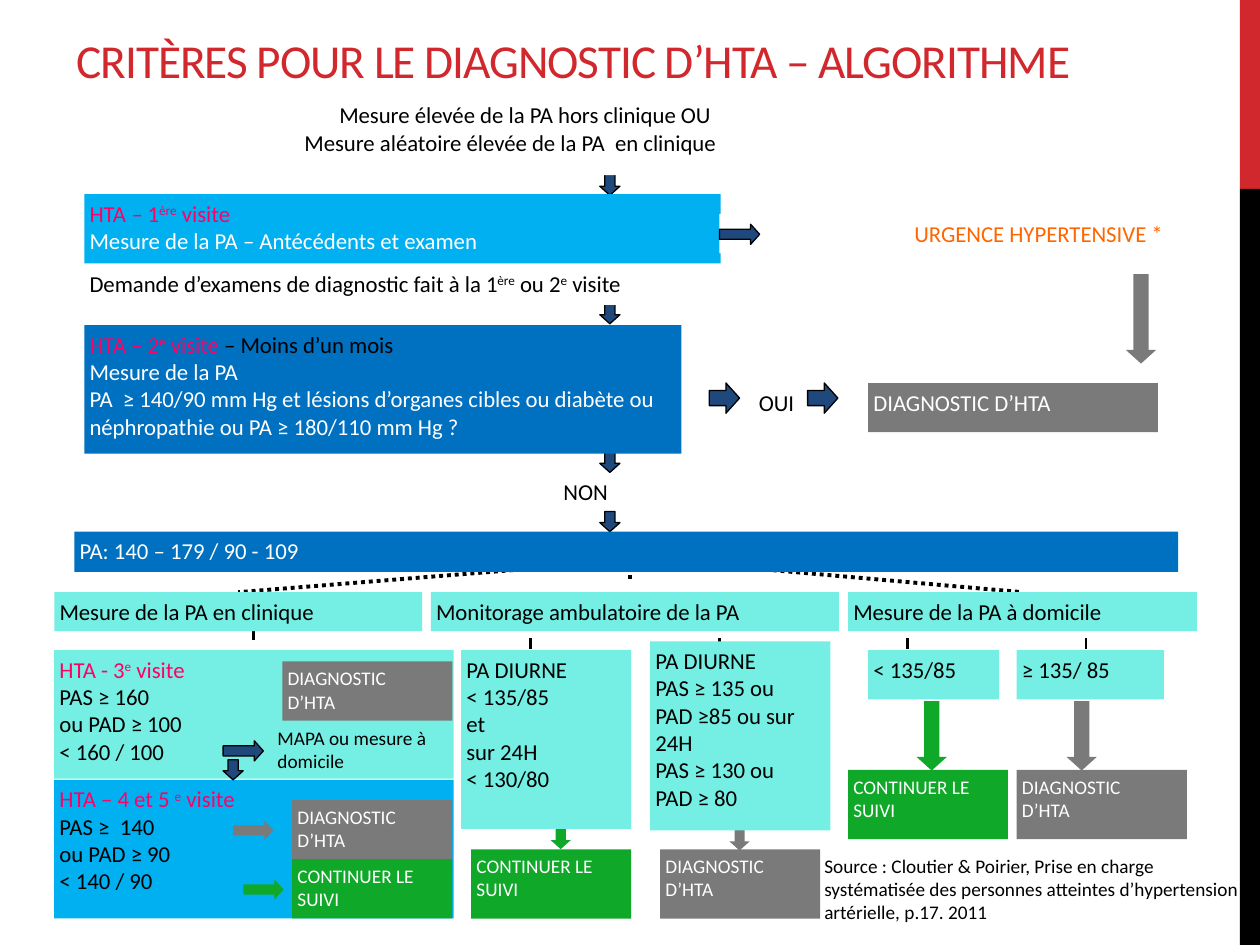
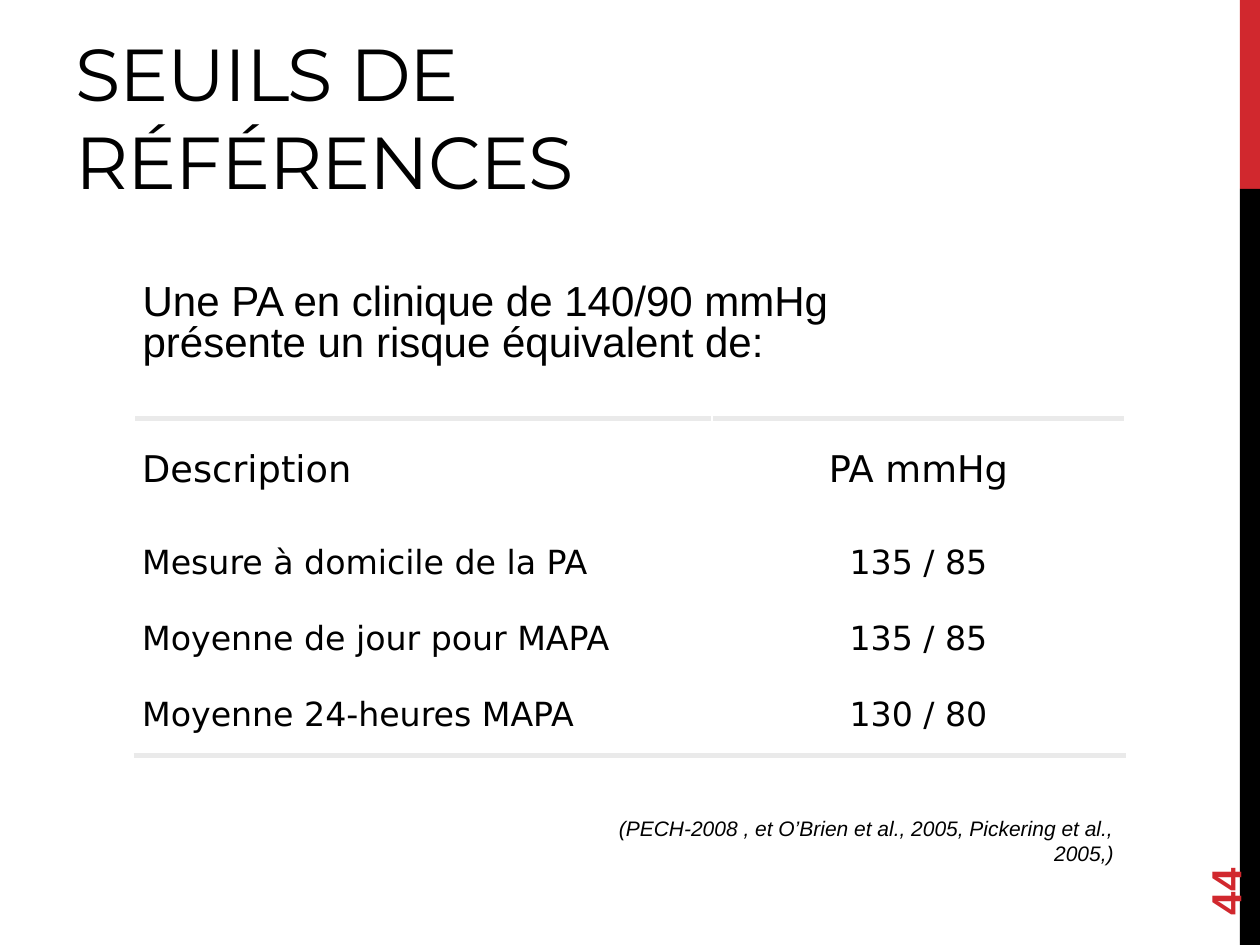
import dataclasses

import lxml.etree
import pptx
import pptx.dml.color
import pptx.enum.dml
import pptx.enum.shapes
import pptx.enum.text
import pptx.oxml.ns
import pptx.util

Pt = pptx.util.Pt
Align = pptx.enum.text.PP_ALIGN
Anchor = pptx.enum.text.MSO_ANCHOR
Dash = pptx.enum.dml.MSO_LINE
Preset = pptx.enum.shapes.MSO_SHAPE


@dataclasses.dataclass(frozen=True)
class Theme:
    red: str = "D1282E"
    black: str = "000000"
    white: str = "FFFFFF"
    pink: str = "FF0066"
    orange: str = "FF6600"
    sky: str = "00B0F0"
    blue: str = "0070C0"
    navy: str = "1F497D"
    aqua: str = "75EFE3"
    gray: str = "7A7A7A"
    green: str = "10A829"
    rule: str = "EAEAEA"
    flow_font: str = "Calibri"
    body_font: str = "Arial"
    table_font: str = "DejaVu Sans"
    title_font: str = "Montserrat"
    flow: float = 13
    small: float = 11
    flow_title: float = 27
    title: float = 42
    body: float = 24
    table_head: float = 21
    table_body: float = 19
    citation: float = 12


T = Theme()


def rgb(color):
    return pptx.dml.color.RGBColor.from_string(color)


def write(frame, paragraphs, size=T.flow, color=T.black, font=T.flow_font, align=Align.LEFT,
          anchor=Anchor.TOP, insets=(3, 3, 3, 3), bold=False, italic=False,
          line_spacing=None, tracking=0):
    """Each paragraph is a string or a list of (text, colour); ^x^ raises x."""
    frame.word_wrap = True
    frame.vertical_anchor = anchor
    frame.margin_left, frame.margin_top, frame.margin_right, frame.margin_bottom = map(Pt, insets)
    for index, content in enumerate(paragraphs):
        paragraph = frame.add_paragraph() if index else frame.paragraphs[0]
        paragraph.alignment = align
        if line_spacing:
            paragraph.line_spacing = line_spacing
        pieces = [(content, color)] if isinstance(content, str) else content
        for text, piece_color in pieces:
            for part, words in enumerate(text.split("^")):
                run = paragraph.add_run()
                run.text = words
                run.font.name, run.font.size = font, Pt(size)
                run.font.bold, run.font.italic = bold, italic
                run.font.color.rgb = rgb(piece_color)
                properties = run._r.get_or_add_rPr()
                if part % 2:
                    properties.set("baseline", "30000")
                if tracking:
                    properties.set("spc", str(round(tracking * 100)))


def preset(slide, kind, bounds, fill, outline=None):
    shape = slide.shapes.add_shape(kind, *map(Pt, bounds))
    shape.shadow.inherit = False
    shape.fill.solid()
    shape.fill.fore_color.rgb = rgb(fill)
    if outline:
        shape.line.color.rgb = rgb(outline)
        shape.line.width = Pt(0.75)
    else:
        shape.line.fill.background()
    return shape


def box(slide, bounds, fill, paragraphs, **text_format):
    shape = preset(slide, Preset.RECTANGLE, bounds, fill)
    write(shape.text_frame, paragraphs, **text_format)
    return shape


def label(slide, bounds, paragraphs, **text_format):
    shape = slide.shapes.add_textbox(*map(Pt, bounds))
    write(shape.text_frame, paragraphs, **text_format)
    return shape


def arrow(slide, center_x, center_y, length, thickness, fill, down=False):
    bounds = (center_x - length / 2, center_y - thickness / 2, length, thickness)
    shape = preset(slide, Preset.RIGHT_ARROW, bounds, fill, T.black if fill == T.navy else None)
    shape.adjustments[0], shape.adjustments[1] = 0.5, 0.45
    shape.rotation = 90 if down else 0


def dashed_line(slide, start, end, width, dash):
    line = slide.shapes.add_connector(pptx.enum.shapes.MSO_CONNECTOR.STRAIGHT,
                                      *map(Pt, start + end))
    line.line.color.rgb = rgb(T.black)
    line.line.width = Pt(width)
    line.line.dash_style = dash
    lxml.etree.SubElement(line._element.spPr, pptx.oxml.ns.qn("a:effectLst"))
    return line


def cell_rule(cell, side):
    """Draw the thick rule on one side of a cell: 'T' or 'B'."""
    qn = pptx.oxml.ns.qn
    border = lxml.etree.Element(qn(f"a:ln{side}"), w=str(Pt(3)))
    fill = lxml.etree.SubElement(border, qn("a:solidFill"))
    lxml.etree.SubElement(fill, qn("a:srgbClr"), val=T.rule)
    cell._tc.get_or_add_tcPr().insert(0, border)


def add_slide(deck):
    """Blank slide with the red and black edge band."""
    slide = deck.slides.add_slide(deck.slide_layouts[6])
    preset(slide, Preset.RECTANGLE, (708.5, 0, 11.5, 108), T.red)
    preset(slide, Preset.RECTANGLE, (708.5, 108, 11.5, 432), T.black)
    return slide


def outcome(slide, bounds, confirmed):
    if confirmed:
        fill, paragraphs = T.gray, ["DIAGNOSTIC", "D’HTA"]
    else:
        fill, paragraphs = T.green, ["CONTINUER LE SUIVI"]
    box(slide, bounds, fill, paragraphs, size=T.small, color=T.white)


def add_visits(slide):
    box(slide, (48.2, 110.9, 363.6, 39.6), T.sky,
        [[("HTA – 1^ère^ visite", T.pink)],
         [("Mesure de la PA – Antécédents et examen", T.white)]])
    box(slide, (48.2, 185.8, 341.3, 73.4), T.blue,
        [[("HTA – 2^e^ visite ", T.pink), ("– Moins d’un mois", T.black)],
         "Mesure de la PA",
         "PA  ≥ 140/90 mm Hg et lésions d’organes cibles ou diabète ou "
         "néphropathie ou PA ≥ 180/110 mm Hg ?"], color=T.white)
    box(slide, (42.5, 303.8, 630.7, 23), T.blue, ["PA: 140 – 179 / 90 - 109"], color=T.white)
    box(slide, (93.6, 54.7, 318.2, 45.4), T.white,
        ["Mesure élevée de la PA hors clinique OU ",
         "Mesure aléatoire élevée de la PA  en clinique"], align=Align.RIGHT)
    box(slide, (48.2, 151.2, 619.2, 23), T.white,
        ["Demande d’examens de diagnostic fait à la 1^ère^ ou 2^e^ visite"])
    box(slide, (411.1, 122.4, 256.3, 22.3), T.white, ["URGENCE HYPERTENSIVE *"],
        color=T.orange, align=Align.RIGHT)
    box(slide, (496.1, 218.9, 165.6, 28.1), T.gray, ["DIAGNOSTIC D’HTA"], color=T.white)
    label(slide, (430.6, 218.9, 86.4, 20.9), ["OUI"])
    label(slide, (319, 270, 103.7, 20.9), ["NON"])


def add_methods(slide):
    """Three ways of measuring; returns their header boxes."""
    headers = [box(slide, (left, 338.4, width, 22.3), T.aqua, [name]) for left, width, name in (
        (31, 210.2, "Mesure de la PA en clinique"),
        (246.2, 233.3, "Monitorage ambulatoire de la PA"),
        (484.6, 199.4, "Mesure de la PA à domicile"))]
    box(slide, (31, 371.5, 228.2, 73.4), T.aqua,
        [[("HTA - 3^e^ visite", T.pink)], "PAS ≥ 160", "ou PAD ≥ 100", "< 160 / 100"])
    box(slide, (31, 445.7, 228.2, 79.2), T.sky,
        [[("HTA – 4 et 5 ^e^ visite", T.pink)], "PAS ≥  140", "ou PAD ≥ 90", "< 140 / 90"])
    box(slide, (263.5, 371.5, 97.2, 102.2), T.aqua,
        ["PA DIURNE", "< 135/85", "et", "sur 24H", "< 130/80"])
    box(slide, (371.5, 366.5, 103, 108), T.aqua,
        ["PA DIURNE", "PAS ≥ 135 ou", "PAD ≥85 ou sur 24H", "PAS ≥ 130 ou", "PAD ≥ 80"])
    box(slide, (496.1, 371.5, 74.9, 28.1), T.aqua, ["< 135/85"])
    box(slide, (581, 371.5, 84.2, 28.1), T.aqua, ["≥ 135/ 85"])
    label(slide, (155.5, 411.8, 114.5, 30.2), ["MAPA ou mesure à domicile"], size=T.small)
    for bounds, confirmed in (
            ((161.3, 378, 97.2, 33.8), True),
            ((167, 457.2, 91.4, 39.6), True),
            ((167, 491, 91.4, 33.8), False),
            ((269.3, 485.3, 91.4, 39.6), False),
            ((377.3, 485.3, 91.4, 39.6), True),
            ((484.6, 439.9, 91.4, 39.6), False),
            ((581, 439.9, 97.2, 39.6), True)):
        outcome(slide, bounds, confirmed)
    return headers


def add_algorithm(deck):
    slide = add_slide(deck)
    label(slide, (36.7, 0, 651.6, 116.6), ["CRITÈRES POUR LE DIAGNOSTIC D’HTA – ALGORITHME"],
          size=T.flow_title, color=T.red, insets=(7.2, 18, 7.2, 3.6), tracking=-0.6)

    for x, top in ((144.7, 349.2), (303.1, 354.2), (411.1, 354.2), (518.4, 354.2), (620.6, 354.2)):
        dashed_line(slide, (x, top), (x, top + 17.3), 1.5, Dash.DASH)
    dashed_line(slide, (360, 315.4), (360, 332.6), 2.25, Dash.ROUND_DOT)
    to_clinic = dashed_line(slide, (351.4, 321.1), (136.1, 338.4), 2.25, Dash.ROUND_DOT)
    to_home = dashed_line(slide, (388.1, 321.1), (584.3, 338.4), 2.25, Dash.ROUND_DOT)
    for y, length in ((103, 17.3), (179.3, 11.5), (264.2, 11.5), (298.1, 11.5)):
        arrow(slide, 348.5, y, length, 11.5, T.navy, down=True)
    arrow(slide, 422.6, 477.4, 17.3, 11.5, T.gray, down=True)

    add_visits(slide)
    clinic, _, home = add_methods(slide)
    to_clinic.end_connect(clinic, 0)
    to_home.end_connect(home, 0)

    for x, y, length, thickness, fill in (
            (422.6, 133.9, 23, 11.5, T.navy), (414, 227.5, 17.3, 17.3, T.navy),
            (470.2, 227.5, 17.3, 17.3, T.navy), (139, 429.1, 23, 11.5, T.navy),
            (144.7, 474.5, 23, 11.5, T.gray), (150.5, 508.3, 23, 11.5, T.green)):
        arrow(slide, x, y, length, thickness, fill)
    for x, y, length, thickness, fill in (
            (652, 182.2, 51.1, 17.3, T.gray), (133.2, 439.9, 11.5, 11.5, T.navy),
            (320.4, 479.5, 11.5, 11.5, T.green), (532.4, 420.5, 39.6, 17.3, T.green),
            (618.1, 420.5, 39.6, 17.3, T.gray)):
        arrow(slide, x, y, length, thickness, fill, down=True)
    label(slide, (468, 485.3, 252.7, 43.2),
          ["Source : Cloutier & Poirier, Prise en charge systématisée des personnes "
           "atteintes d’hypertension artérielle, p.17. 2011"], size=T.small)


def add_threshold_table(slide):
    rows = (("Description", "PA mmHg"),
            ("Mesure à domicile de la PA", "135 / 85"),
            ("Moyenne de jour pour MAPA", "135 / 85"),
            ("Moyenne 24-heures MAPA", "130 / 80"))
    table = slide.shapes.add_table(4, 2, *map(Pt, (77, 239, 565.9, 193))).table
    table.first_row = table.horz_banding = False
    for column, width in zip(table.columns, (329.8, 236.1)):
        column.width = Pt(width)
    for row, height in zip(table.rows, (59, 47.5, 39.6, 46.8)):
        row.height = Pt(height)
    for r, values in enumerate(rows):
        for c, value in enumerate(values):
            cell = table.cell(r, c)
            cell.fill.background()
            write(cell.text_frame, [value], font=T.table_font,
                  size=T.table_body if r else T.table_head,
                  align=Align.CENTER if c else Align.LEFT)
            cell.vertical_anchor = Anchor.MIDDLE
            cell.margin_left = cell.margin_right = Pt(4.3)
            cell.margin_top = cell.margin_bottom = Pt(4.3)
            if r == 0:
                cell_rule(cell, "T")
            elif r == len(rows) - 1:
                cell_rule(cell, "B")


def add_thresholds(deck):
    slide = add_slide(deck)
    label(slide, (36, 12.2, 455.8, 108), ["SEUILS DE RÉFÉRENCES"], size=T.title,
          font=T.title_font, anchor=Anchor.BOTTOM, insets=(7.2, 3.6, 10, 3.6), tracking=-0.6)
    page_number = label(slide, (648, 463.7, 103.7, 28.8), ["44"], size=T.body, color=T.red,
                        font=T.body_font, bold=True, anchor=Anchor.MIDDLE,
                        insets=(7.2, 3.6, 7.2, 3.6))
    page_number.rotation = 270
    add_threshold_table(slide)
    label(slide, (78.5, 162.7, 490.3, 56.2),
          ["Une PA en clinique de 140/90 mmHg présente un risque équivalent de:"],
          size=T.body, font=T.body_font, insets=(3, 0, 14, 0), line_spacing=0.8)
    label(slide, (313.2, 465.8, 326.2, 28),
          ["(PECH-2008 , et O’Brien et al., 2005, Pickering et al., 2005,)"],
          size=T.citation, font=T.body_font, italic=True, align=Align.RIGHT, insets=(14, 0, 3, 0))


def main():
    deck = pptx.Presentation()
    deck.slide_width, deck.slide_height = Pt(720), Pt(540)
    add_algorithm(deck)
    add_thresholds(deck)
    deck.save("out.pptx")


if __name__ == "__main__":
    main()
